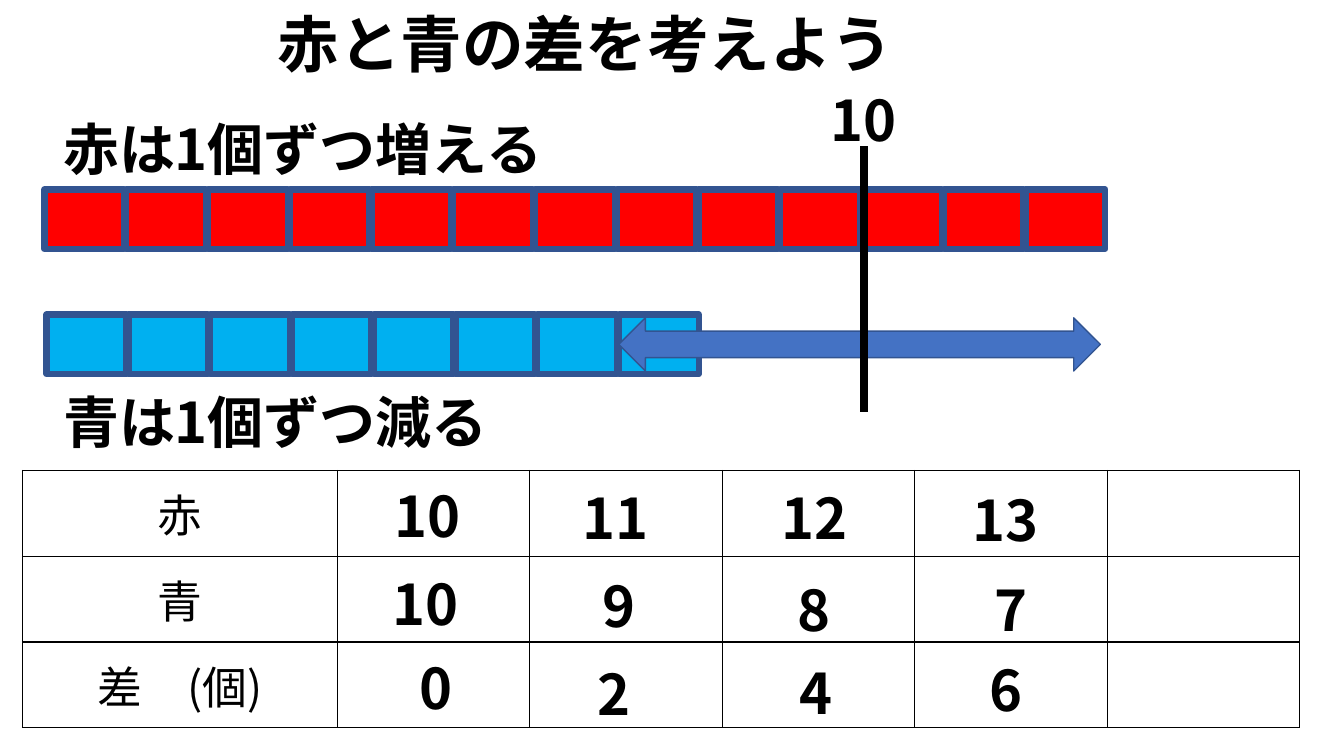
from lxml.etree import SubElement as Sub
from pptx import Presentation
from pptx.dml.color import RGBColor
from pptx.enum.shapes import MSO_CONNECTOR as Conn, MSO_SHAPE as Shape
from pptx.enum.text import MSO_ANCHOR as Anchor, PP_ALIGN as Align
from pptx.oxml.ns import qn
from pptx.util import Pt

FONT = "Noto Sans CJK JP"
BLACK, RED, BLUE = "000000", "FF0000", "00B0F0"
EDGE, ARROW = "325491", "4472C4"

# Numbers over the table: text, left, top
COUNTS = [
    ("10", 275, 340.5), ("11", 409, 341.5), ("12", 551, 341.5), ("13", 687.5, 343.5),
    ("10", 273, 403), ("9", 423.5, 404.5), ("8", 562.5, 407.5), ("7", 703.5, 407.5),
    ("0", 292.5, 463.5), ("2", 420, 467.5), ("4", 564, 466.5), ("6", 700, 464.5),
]


def color(code):
    return RGBColor.from_string(code)


def add_run(para, text, size, bold=False):
    run = para.add_run()
    run.text = text
    font = run.font
    font.size, font.bold, font.name = Pt(size), bold, FONT
    font.color.rgb = color(BLACK)
    Sub(font._element, qn("a:ea"), typeface=FONT)


def add_title(slide, text, left, top, width, height):
    title = slide.shapes.title
    title.left, title.top = Pt(left), Pt(top)
    title.width, title.height = Pt(width), Pt(height)
    frame = title.text_frame
    frame.vertical_anchor = Anchor.TOP
    para = frame.paragraphs[0]
    para.alignment = Align.LEFT
    add_run(para, text, 44, True)


def add_label(slide, text, left, top, width):
    box = slide.shapes.add_textbox(Pt(left), Pt(top), Pt(width), Pt(55.5))
    box.text_frame.word_wrap = True
    add_run(box.text_frame.paragraphs[0], text, 40, True)


def add_block(slide, kind, left, top, width, height, fill, line):
    block = slide.shapes.add_shape(kind, Pt(left), Pt(top), Pt(width), Pt(height))
    block.shadow.inherit = False
    block.fill.solid()
    block.fill.fore_color.rgb = color(fill)
    block.line.color.rgb = color(EDGE)
    block.line.width = Pt(line)


def add_bar(slide, count, left, top, fill):
    for i in range(count):
        add_block(slide, Shape.RECTANGLE, left + 58.4 * i, top, 57, 42.5, fill, 4.5)


def add_mark(slide, x, top, end):
    mark = slide.shapes.add_connector(Conn.STRAIGHT, Pt(x), Pt(top), Pt(x), Pt(end))
    mark.line.color.rgb = color(BLACK)
    mark.line.width = Pt(6)
    Sub(mark._element.spPr, qn("a:effectLst"))


def add_edges(cell):
    props = cell._tc.get_or_add_tcPr()
    for side in ("lnL", "lnR", "lnT", "lnB"):
        line = Sub(props, qn("a:" + side), w=str(Pt(1)))
        fill = Sub(line, qn("a:solidFill"))
        Sub(fill, qn("a:srgbClr"), val=BLACK)


def add_grid(slide, heads, left, top):
    widths = [225] + [137.5] * 5
    frame = slide.shapes.add_table(len(heads), len(widths), Pt(left), Pt(top),
                                   Pt(sum(widths)), Pt(61.3 * len(heads)))
    grid = frame.table
    grid.first_row = grid.horz_banding = False
    for col, width in zip(grid.columns, widths):
        col.width = Pt(width)
    for cell in grid.iter_cells():
        add_edges(cell)
        cell.fill.background()
    for row, head in enumerate(heads):
        cell = grid.cell(row, 0)
        cell.vertical_anchor = Anchor.MIDDLE
        para = cell.text_frame.paragraphs[0]
        para.alignment = Align.CENTER
        add_run(para, head, 32)


def main():
    deck = Presentation()
    deck.slide_width, deck.slide_height = Pt(960), Pt(540)
    slide = deck.slides.add_slide(deck.slide_layouts[5])

    # Title
    add_title(slide, "赤と青の差を考えよう", 191, 0.7, 624, 60.5)

    # Bars, difference arrow and mark at ten
    add_bar(slide, 13, 31.7, 135.3, RED)
    add_bar(slide, 8, 33.3, 224.7, BLUE)
    add_block(slide, Shape.LEFT_RIGHT_ARROW, 442, 227, 344, 38, ARROW, 1)
    add_mark(slide, 617, 104.5, 294.5)

    # Bar labels
    add_label(slide, "10", 586, 57.5, 82)
    add_label(slide, "赤は1個ずつ増える", 38, 78.5, 429)
    add_label(slide, "青は1個ずつ減る", 38, 273.5, 429)

    # Table and its numbers
    add_grid(slide, ["赤", "青", "差　(個)"], 16, 336)
    for text, left, top in COUNTS:
        add_label(slide, text, left, top, 24 + 29 * len(text))

    deck.save("out.pptx")


if __name__ == "__main__":
    main()
